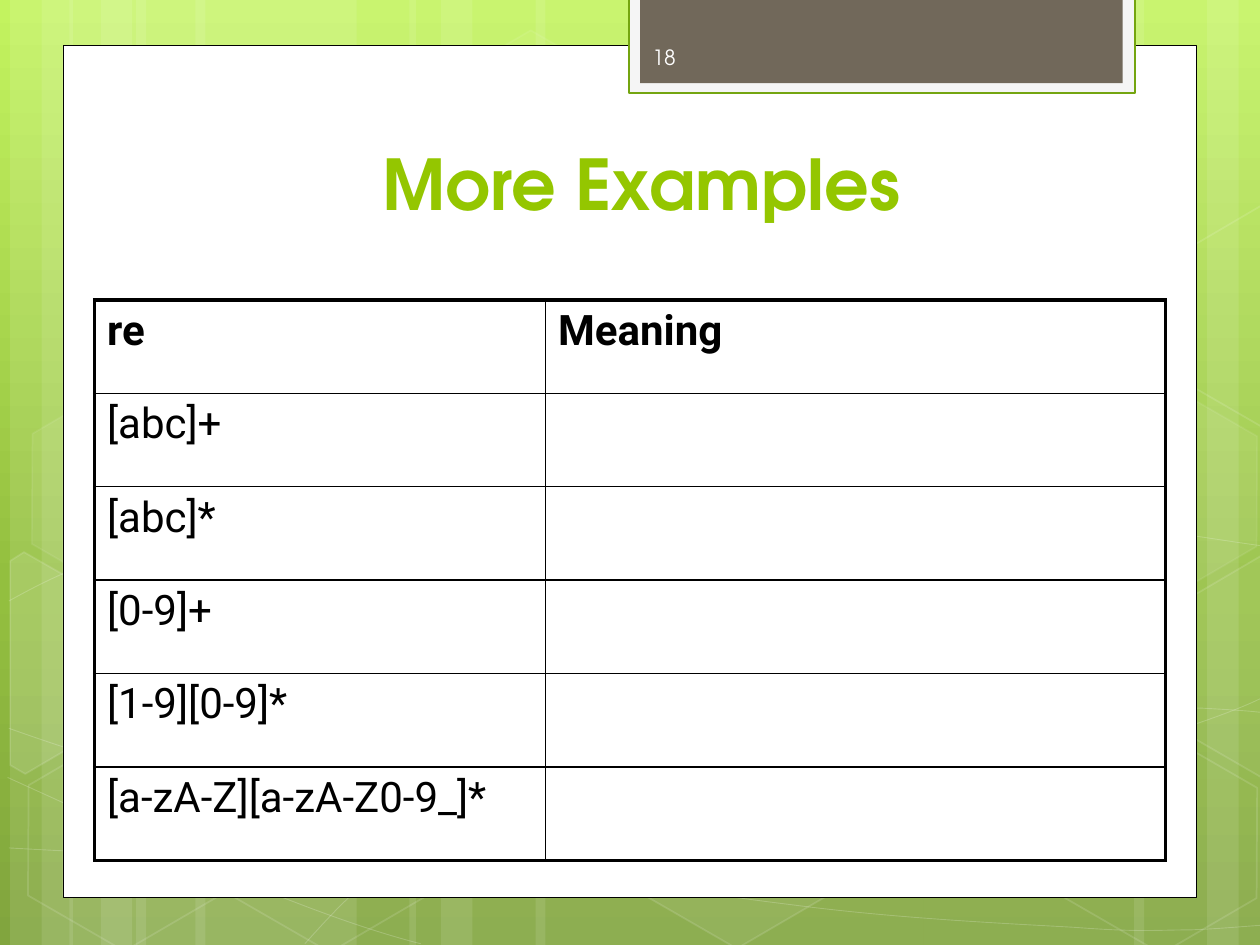
"""Build the "More Examples" slide: a table of regular expressions on a green patterned page."""
from math import cos, radians, sin

from lxml import etree
from pptx import Presentation
from pptx.dml.color import RGBColor
from pptx.enum.shapes import MSO_SHAPE
from pptx.enum.text import MSO_ANCHOR, MSO_AUTO_SIZE, PP_ALIGN
from pptx.oxml.ns import qn
from pptx.util import Inches, Pt

RECTANGLE, HEXAGON = MSO_SHAPE.RECTANGLE, MSO_SHAPE.HEXAGON
BOTTOM, MIDDLE = MSO_ANCHOR.BOTTOM, MSO_ANCHOR.MIDDLE
CENTER, NO_FIT = PP_ALIGN.CENTER, MSO_AUTO_SIZE.NONE

COLORS = {
    "white": "FFFFFF", "black": "000000", "tab": "F5F5F5", "tab line": "74A510",
    "band": "71685A", "title": "94C600", "number": "FEFEFE",
}
BACKGROUND = [(0, "C3F35F"), (62, "93BF3F"), (100, "81A53E")]
TITLE, PAGE_NUMBER = "More Examples", "18"
TITLE_FONT, TABLE_FONT = "TeX Gyre Adventor", "Roboto"
ROWS = [
    ("re", "Meaning"),
    ("[abc]+", ""),
    ("[abc]*", ""),
    ("[0-9]+", ""),
    ("[1-9][0-9]*", ""),
    ("[a-zA-Z][a-zA-Z0-9_]*", ""),
]
COLUMN_WIDTHS, TABLE_HEIGHT = (3.58, 4.92), 4.45
THIN, THICK = 1, 2.25
TILT = 30

STRIPES = [
    (1.08, 1.75, 0), (0.08, 0.5, 0), (0.33, 0.83, 0), (1.55, 1.75, 0), (0.55, 0.5, 0), (0.8, 0.83, 0),
    (7.33, 1.75, 180), (9.58, 0.5, 180), (9, 0.83, 180), (4.25, 3.08, 0), (3.25, 0.5, 0), (3.5, 0.83, 0),
]
CURVES = [
    [(0.07, 6.73), (0.61, 6.76), (1.15, 6.79), (1.9, 6.78), (2.65, 6.77), (3.58, 6.75), (4.58, 6.65),
     (5.58, 6.55), (7, 6.36), (7.92, 6.17), (8.83, 5.98), (9.77, 5.68), (10.07, 5.51)],
    [(0.07, 4.77), (0.36, 4.61), (0.65, 4.46), (1.21, 4.31), (1.78, 4.16), (2.59, 3.94), (3.47, 3.87),
     (4.36, 3.8), (5.44, 3.79), (6.54, 3.87), (7.64, 3.95), (9.47, 4.26), (10.07, 4.34)],
    [(0.06, 6.17), (1.27, 6.72), (2.47, 7.27), (3.34, 7.49)],
    [(0.07, 5.78), (0.38, 5.89), (0.7, 6), (1.28, 6.16), (1.86, 6.31), (2.73, 6.56), (3.57, 6.73),
     (4.4, 6.9), (5.45, 7.08), (6.28, 7.18), (7.11, 7.29), (8, 7.33), (8.53, 7.36),
     (9.05, 7.4), (9.19, 7.38), (9.45, 7.38), (9.71, 7.37), (9.89, 7.35), (10.07, 7.34)],
    [(2.42, 7.49), (2.6, 7.29), (2.78, 7.09), (3.02, 6.91), (3.26, 6.73), (3.6, 6.53), (3.88, 6.39),
     (4.16, 6.25), (4.33, 6.19), (4.7, 6.09), (5.06, 5.99), (5.73, 5.85), (6.08, 5.78),
     (6.44, 5.71), (6.49, 5.71), (6.8, 5.69), (7.11, 5.66), (7.6, 5.63), (7.94, 5.62),
     (8.29, 5.61), (8.86, 5.62), (8.86, 5.62), (9.08, 5.62), (9.31, 5.62), (9.53, 5.62),
     (9.71, 5.63), (9.88, 5.64), (9.97, 5.65), (10.06, 5.66), (10.03, 5.65), (10.06, 5.66)],
]
HEXAGONS = [
    (3.34, 0.36, 4, 8), (4.97, 5.89, 6, 12), (0.11, 5.91, None, 12), (0.14, 3.12, 7, 8),
    (1.74, 5.92, None, 12), (7.53, 4.53, 10, 12), (8.34, 5.93, None, 12), (8.34, 3.14, 7, 8),
]
CUT_HEXAGONS = [
    ((0.36, 5.35), [(0.08, 4.45), (0.19, 4.38), (0.96, 4.82), (0.95, 5.7), (0.2, 6.14), (0.08, 6.07)], 10),
    ((9.85, 5.2), [(9.26, 4.85), (10.01, 4.41), (10.09, 4.46), (10.09, 6.13), (10.02, 6.17), (9.26, 5.73)], 4),
    ((9.85, 2.41), [(9.26, 2.07), (10.01, 1.63), (10.1, 1.68), (10.09, 3.35), (10.02, 3.39), (9.26, 2.95)], None),
]
PANELS = [
    ((0.5, 0.36, 9, 6.76), "white", "black", 0.5),
    ((4.99, -0.02, 4.02, 0.76), "tab", "tab line", 1.25),
    ((5.08, -0.02, 3.83, 0.68), "band", None, 0),
]


def rgb(name):
    return RGBColor.from_string(COLORS[name])


def set_opacity(parent, percent):
    color = parent.find(".//" + qn("a:srgbClr"))
    etree.SubElement(color, qn("a:alpha"), val=str(percent * 1000))


def style(shape, fill=None, opacity=100, line=None, width=0, line_opacity=100):
    shape.shadow.inherit = False
    properties = shape._element.spPr
    if fill:
        shape.fill.solid()
        shape.fill.fore_color.rgb = rgb(fill)
        if opacity < 100:
            set_opacity(properties.find(qn("a:solidFill")), opacity)
    else:
        shape.fill.background()
    if line:
        shape.line.color.rgb = rgb(line)
        shape.line.width = Pt(width)
        if line_opacity < 100:
            set_opacity(properties.find(qn("a:ln")), line_opacity)
    else:
        shape.line.fill.background()


def add_shape(slide, kind, place, rotation=0, **look):
    shape = slide.shapes.add_shape(kind, *map(Inches, place))
    shape.rotation = rotation
    style(shape, **look)
    return shape


def add_outline(slide, points, close, **look):
    start, *rest = [(Inches(x), Inches(y)) for x, y in points]
    builder = slide.shapes.build_freeform(*start)
    builder.add_line_segments(rest, close=close)
    shape = builder.convert_to_shape()
    style(shape, **look)
    return shape


def bend(shape):
    outline = shape._element.find(".//" + qn("a:path"))
    lines = outline.findall(qn("a:lnTo"))
    for first in range(0, len(lines), 3):
        curve = etree.SubElement(outline, qn("a:cubicBezTo"))
        for line in lines[first:first + 3]:
            curve.append(line[0])
            outline.remove(line)


def turn_back(points, center):
    c, s = cos(radians(TILT)), sin(radians(TILT))
    offsets = [(x - center[0], y - center[1]) for x, y in points]
    return [(center[0] + x * c + y * s, center[1] - x * s + y * c) for x, y in offsets]


def paint_background(slide):
    slide.background.fill.gradient()
    gradient = slide._element.find(".//" + qn("a:gradFill"))
    stops = gradient.find(qn("a:gsLst"))
    for stop in list(stops):
        stops.remove(stop)
    for position, color in BACKGROUND:
        stop = etree.SubElement(stops, qn("a:gs"), pos=str(position * 1000))
        etree.SubElement(stop, qn("a:srgbClr"), val=color)
    gradient.find(qn("a:lin")).set("ang", str(90 * 60000))


def draw_pattern(slide):
    for left, width, rotation in STRIPES:
        add_shape(slide, RECTANGLE, (left, 0, width, 7.5), rotation, fill="white", opacity=10)
    for points in CURVES:
        bend(add_outline(slide, points, False, line="white", width=0.5, line_opacity=20))
    for left, top, opacity, line_opacity in HEXAGONS:
        hexagon = add_shape(slide, HEXAGON, (left, top, 1.75, 1.52), TILT, fill=opacity and "white",
                            opacity=opacity, line="white", width=1, line_opacity=line_opacity)
        hexagon.adjustments[0] = 0.285
    for center, points, opacity in CUT_HEXAGONS:
        outline = add_outline(slide, turn_back(points, center), True, fill=opacity and "white",
                              opacity=opacity, line="white", width=1, line_opacity=12)
        outline.rotation = TILT


def write(frame, text, font, size, color, bold=False):
    para = frame.paragraphs[0]
    span = para.add_run()
    span.text = text
    span.font.name, span.font.size, span.font.bold = font, Pt(size), bold
    span.font.color.rgb = rgb(color)
    return para


def set_borders(cell, widths):
    for side, width in widths.items():
        line = etree.SubElement(cell._tc.get_or_add_tcPr(), qn("a:ln" + side), w=str(Pt(width)))
        solid = etree.SubElement(line, qn("a:solidFill"))
        etree.SubElement(solid, qn("a:srgbClr"), val=COLORS["black"])


def add_examples(slide):
    place = (0.75, 2.38, sum(COLUMN_WIDTHS), TABLE_HEIGHT)
    table = slide.shapes.add_table(len(ROWS), len(COLUMN_WIDTHS), *map(Inches, place)).table
    table.first_row = table.horz_banding = False
    for column, width in zip(table.columns, COLUMN_WIDTHS):
        column.width = Inches(width)
    last_row, last_column = len(ROWS) - 1, len(COLUMN_WIDTHS) - 1
    for r, texts in enumerate(ROWS):
        for c, text in enumerate(texts):
            cell = table.cell(r, c)
            edges = {"L": c == 0, "R": c == last_column, "T": r == 0, "B": r == last_row}
            set_borders(cell, {side: THICK if outer else THIN for side, outer in edges.items()})
            cell.fill.background()
            if text:
                para = write(cell.text_frame, text, TABLE_FONT, 24, "black", bold=r == 0)
                before = etree.SubElement(para._p.get_or_add_pPr(), qn("a:spcBef"))
                etree.SubElement(before, qn("a:spcPct"), val="20000")


def main():
    deck = Presentation()
    deck.slide_width, deck.slide_height = Inches(10), Inches(7.5)
    slide = deck.slides.add_slide(deck.slide_layouts[5])
    paint_background(slide)
    draw_pattern(slide)
    for place, fill, line, width in PANELS:
        add_shape(slide, RECTANGLE, place, fill=fill, line=line, width=width)
    title = slide.shapes.title
    title.left, title.top, title.width, title.height = map(Inches, (0.83, 1, 8.52, 0.83))
    title.text_frame.auto_size, title.text_frame.vertical_anchor = NO_FIT, BOTTOM
    write(title.text_frame, TITLE, TITLE_FONT, 40, "title", bold=True).alignment = CENTER
    slide.shapes._spTree.append(title._element)
    add_examples(slide)
    box = slide.shapes.add_textbox(*map(Inches, (5.08, 0.25, 1.46, 0.4)))
    box.text_frame.word_wrap, box.text_frame.vertical_anchor = True, MIDDLE
    write(box.text_frame, PAGE_NUMBER, TITLE_FONT, 12, "number")
    deck.save("out.pptx")


if __name__ == "__main__":
    main()
